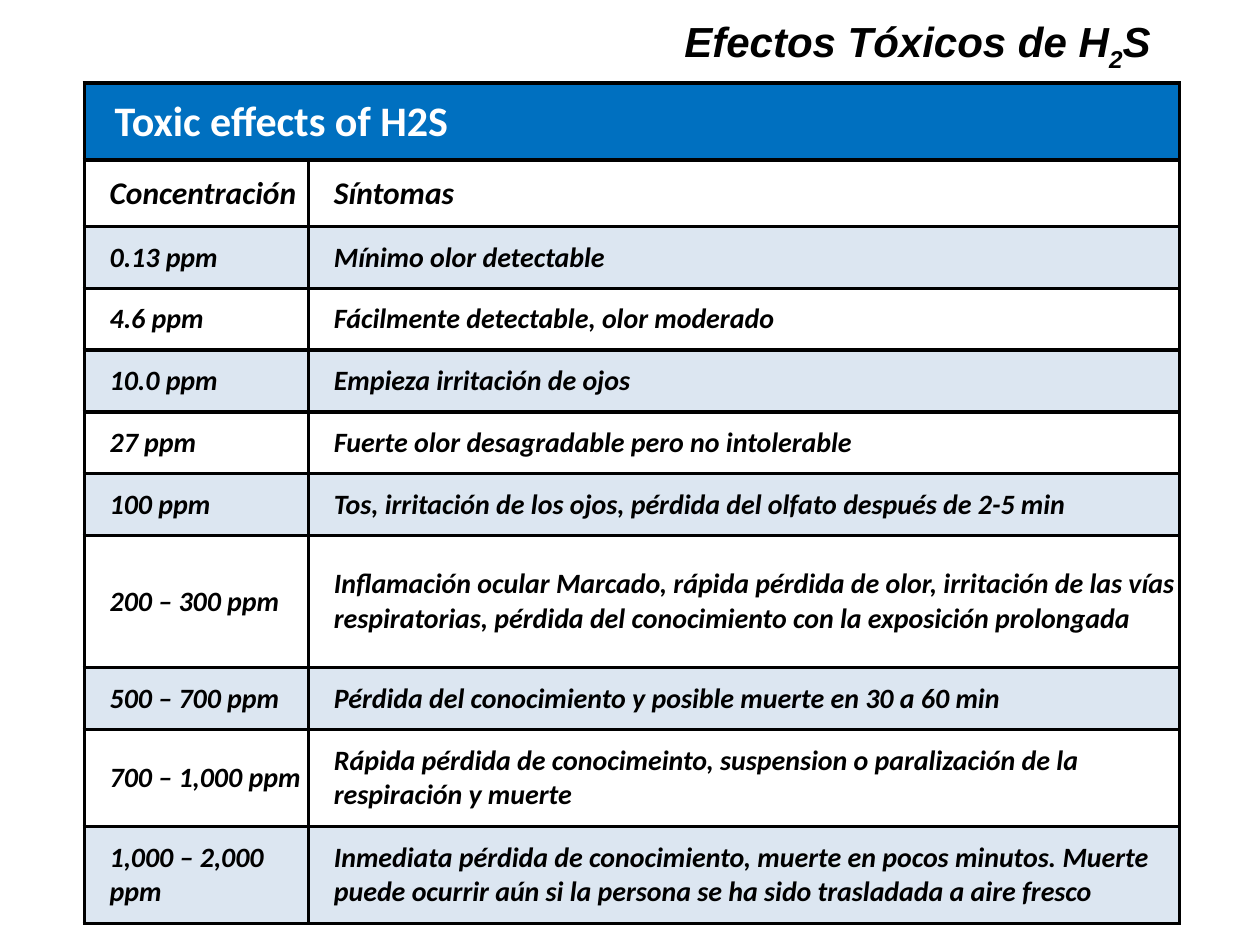
from lxml.etree import SubElement
from pptx import Presentation
from pptx.dml.color import RGBColor
from pptx.enum.text import MSO_ANCHOR as Anchor, PP_ALIGN as Align
from pptx.oxml.ns import qn
from pptx.util import Inches, Pt

BLACK = RGBColor(0x00, 0x00, 0x00)
WHITE = RGBColor(0xFF, 0xFF, 0xFF)
BLUE = RGBColor(0x00, 0x70, 0xC0)
PALE_BLUE = RGBColor(0xDC, 0xE6, 0xF1)

COLUMN_WIDTHS = [1.78, 6.91]
TABLE_TITLE = "Toxic effects of H2S"
TITLE_HEIGHT = 0.61
ROWS = [  # height, concentration, symptoms
    (0.53, "Concentración", "Síntomas"),
    (0.49, "0.13 ppm", "Mínimo olor detectable"),
    (0.49, "4.6 ppm", "Fácilmente detectable, olor moderado"),
    (0.49, "10.0 ppm", "Empieza irritación de ojos"),
    (0.49, "27 ppm", "Fuerte olor desagradable pero no intolerable"),
    (0.49, "100 ppm", "Tos, irritación de los ojos, pérdida del olfato después de 2-5 min"),
    (1.05, "200 – 300 ppm", "Inflamación ocular Marcado, rápida pérdida de olor, irritación de las "
     "vías respiratorias, pérdida del conocimiento con la exposición prolongada"),
    (0.49, "500 – 700 ppm", "Pérdida del conocimiento y posible muerte en 30 a 60 min"),
    (0.77, "700 – 1,000 ppm", "Rápida pérdida de conocimeinto, suspension o paralización de la "
     "respiración y muerte"),
    (0.77, "1,000 – 2,000 ppm", "Inmediata pérdida de conocimiento, muerte en pocos minutos. Muerte "
     "puede ocurrir aún si la persona se ha sido trasladada a aire fresco"),
]


def style_font(font, name, size, color, italic):
    font.name = name
    font.size = Pt(size)
    font.bold = True
    font.italic = italic
    font.color.rgb = color


def add_title(slide):
    box = slide.shapes.add_textbox(Inches(1.84), Inches(0), Inches(7.39), Inches(0.63))
    text_frame = box.text_frame
    text_frame.word_wrap = True
    text_frame.vertical_anchor = Anchor.BOTTOM
    paragraph = text_frame.paragraphs[0]
    paragraph.alignment = Align.RIGHT
    for text, baseline in [("Efectos Tóxicos de H", 0), ("2", -25000), ("S", 0)]:
        run = paragraph.add_run()
        run.text = text
        style_font(run.font, "Arial", 24, BLACK, True)
        if baseline:
            run.font._element.set("baseline", str(baseline))


def set_borders(cell):
    properties = cell._tc.get_or_add_tcPr()
    for side in ("a:lnL", "a:lnR", "a:lnT", "a:lnB"):
        line = SubElement(properties, qn(side), w=str(Pt(2.25)))
        fill = SubElement(line, qn("a:solidFill"))
        SubElement(fill, qn("a:srgbClr"), val=str(BLACK))


def fill_cell(cell, text, size, color, fill, margins, italic=True):
    cell.text_frame.text = text
    style_font(cell.text_frame.paragraphs[0].runs[0].font, "Calibri", size, color, italic)
    cell.vertical_anchor = Anchor.MIDDLE
    left, top, right, bottom = map(Inches, margins)
    cell.margin_left, cell.margin_top = left, top
    cell.margin_right, cell.margin_bottom = right, bottom
    if fill is None:
        cell.fill.background()
    else:
        cell.fill.solid()
        cell.fill.fore_color.rgb = fill


def add_effects_table(slide):
    heights = [TITLE_HEIGHT] + [row[0] for row in ROWS]
    table = slide.shapes.add_table(
        len(heights), len(COLUMN_WIDTHS), Inches(0.67), Inches(0.66),
        Inches(sum(COLUMN_WIDTHS)), Inches(sum(heights))).table
    for column, width in zip(table.columns, COLUMN_WIDTHS):
        column.width = Inches(width)
    for row, height in zip(table.rows, heights):
        row.height = Inches(height)
    for cell in table.iter_cells():
        set_borders(cell)

    # Title row across both columns
    title_cell = table.cell(0, 0)
    title_cell.merge(table.cell(0, 1))
    fill_cell(title_cell, TABLE_TITLE, 24, WHITE, BLUE, (0.24, 0.01, 0.01, 0), italic=False)

    # Column headings and banded data rows
    for row_index, (_, *texts) in enumerate(ROWS, start=1):
        size = 18 if row_index == 1 else 16
        fill = PALE_BLUE if row_index % 2 == 0 else None
        for column_index, text in enumerate(texts):
            fill_cell(table.cell(row_index, column_index), text, size, BLACK, fill,
                      (0.2, 0.1, 0.01, 0.1))


def main():
    presentation = Presentation()
    presentation.slide_width = Inches(10)
    presentation.slide_height = Inches(7.5)
    slide = presentation.slides.add_slide(presentation.slide_layouts[6])
    add_title(slide)
    add_effects_table(slide)
    presentation.save("out.pptx")


if __name__ == "__main__":
    main()
